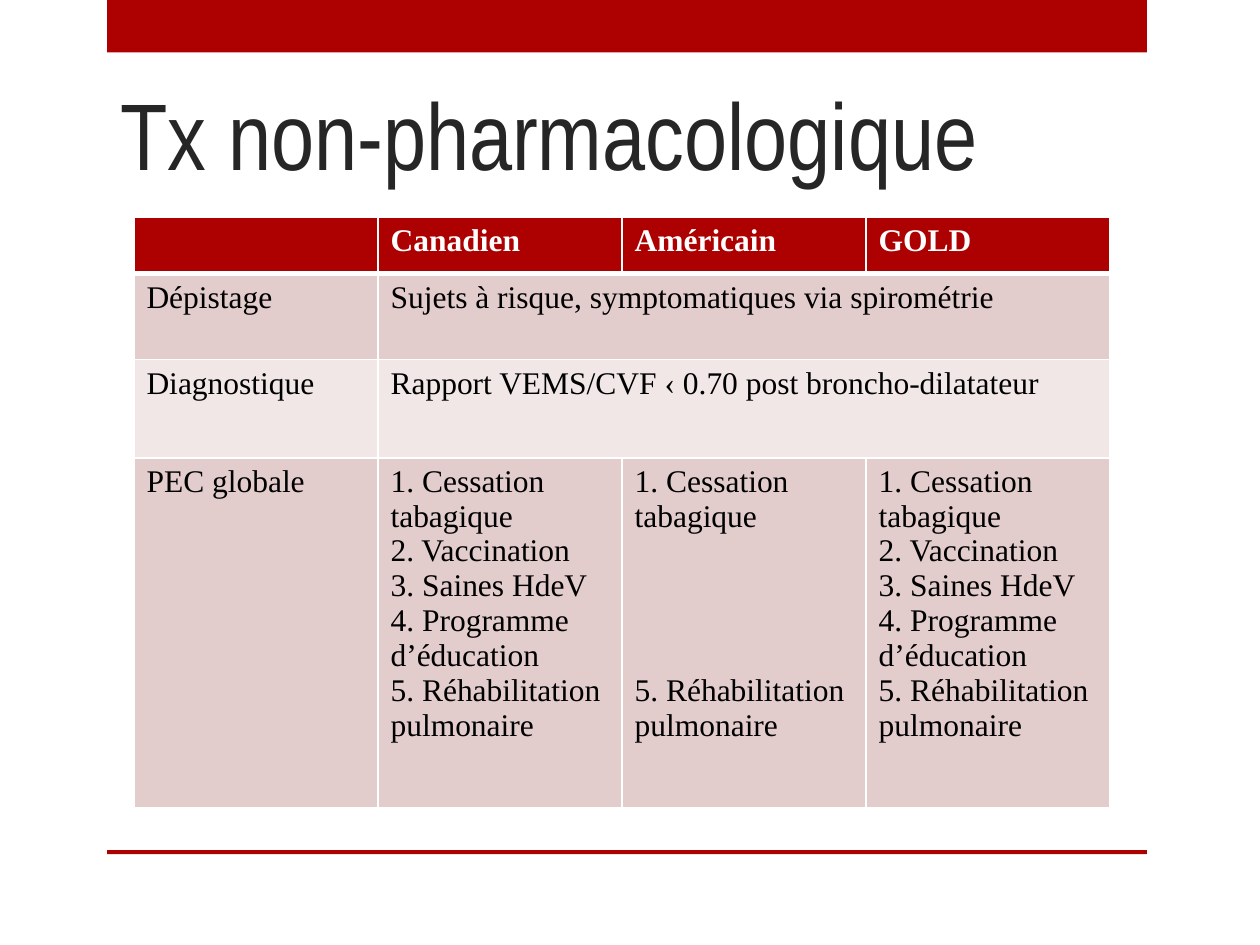
from lxml.etree import SubElement
from pptx import Presentation
from pptx.dml.color import RGBColor
from pptx.enum.shapes import MSO_SHAPE
from pptx.enum.text import MSO_ANCHOR
from pptx.oxml import parse_xml
from pptx.oxml.ns import nsdecls, qn
from pptx.util import Cm, Pt

COLORS = {
    "red": "AD0101",
    "title": "262626",
    "white": "FFFFFF",
    "black": "000000",
    "dark band": "E3CCCC",
    "light band": "F1E7E7",
}
TITLE_FORMAT = {"name": "Arial Narrow", "size": Pt(54), "bold": False}
HEADER_FORMAT = {"name": "Times New Roman", "size": Pt(18), "bold": True}
BODY_FORMAT = {**HEADER_FORMAT, "bold": False}

FIRST_STEP = "1. Cessation tabagique"
LAST_STEP = "5. Réhabilitation pulmonaire"
ALL_STEPS = [
    FIRST_STEP,
    "2. Vaccination",
    "3. Saines HdeV",
    "4. Programme d’éducation",
    LAST_STEP,
]
ROWS = [
    ["", "Canadien", "Américain", "GOLD"],
    ["Dépistage", "Sujets à risque, symptomatiques via spirométrie"],
    ["Diagnostique", "Rapport VEMS/CVF ‹ 0.70 post broncho-dilatateur"],
    ["PEC globale", ALL_STEPS, [FIRST_STEP, LAST_STEP], ALL_STEPS],
]
ROW_HEIGHTS = [1.14, 1.73, 1.98, 7.06]
ROW_FILLS = ["red", "dark band", "light band", "dark band"]
COLUMN_WIDTH = 4.92
SKIPPED_STEPS_GAP = Pt(80)


def rgb(color):
    return RGBColor.from_string(COLORS[color])


def add_bar(slide, top, height):
    bar = slide.shapes.add_shape(
        MSO_SHAPE.RECTANGLE, Cm(2.16), Cm(top), Cm(20.96), Cm(height)
    )
    bar.shadow.inherit = False
    bar.fill.solid()
    bar.fill.fore_color.rgb = rgb("red")
    bar.line.fill.background()


def write_span(para, text, formats, color):
    span = para.add_run()
    span.text = text
    for name, value in formats.items():
        setattr(span.font, name, value)
    span.font.color.rgb = rgb(color)


def add_title(slide, text):
    box = slide.shapes.add_textbox(Cm(2.18), Cm(1.12), Cm(20.93), Cm(2.82))
    frame = box.text_frame
    frame.word_wrap = True
    frame.vertical_anchor = MSO_ANCHOR.BOTTOM
    write_span(frame.paragraphs[0], text, TITLE_FORMAT, "title")


def set_borders(cell, widths):
    """Draw white borders; widths maps a side letter (L, R, T, B) to points."""
    properties = cell._tc.get_or_add_tcPr()
    for index, (side, width) in enumerate(widths.items()):
        line = parse_xml(f'<a:ln{side} {nsdecls("a")} w="{Pt(width)}"/>')
        fill = SubElement(line, qn("a:solidFill"))
        SubElement(fill, qn("a:srgbClr"), val=COLORS["white"])
        properties.insert(index, line)


def fill_cell(cell, content, formats, color):
    lines = content if isinstance(content, list) else [content]
    frame = cell.text_frame
    for index, text in enumerate(lines):
        para = frame.add_paragraph() if index else frame.paragraphs[0]
        if text:
            write_span(para, text, formats, color)
    if lines == [FIRST_STEP, LAST_STEP]:
        frame.paragraphs[1].space_before = SKIPPED_STEPS_GAP


def add_guideline_table(slide):
    columns = len(ROWS[0])
    table = slide.shapes.add_table(
        len(ROWS), columns, Cm(2.7), Cm(4.38),
        Cm(COLUMN_WIDTH * columns), Cm(sum(ROW_HEIGHTS)),
    ).table
    table.first_row = table.horz_banding = False
    for column in table.columns:
        column.width = Cm(COLUMN_WIDTH)

    for index, contents in enumerate(ROWS):
        row = table.rows[index]
        row.height = Cm(ROW_HEIGHTS[index])
        borders = {
            "L": 1,
            "R": 1,
            "T": 3 if index == 1 else 1,
            "B": 3 if index == 0 else 1,
        }
        for cell in row.cells:
            cell.fill.solid()
            cell.fill.fore_color.rgb = rgb(ROW_FILLS[index])
            set_borders(cell, borders)
        if len(contents) < columns:
            table.cell(index, 1).merge(table.cell(index, columns - 1))
        style = (HEADER_FORMAT, "white") if index == 0 else (BODY_FORMAT, "black")
        for cell, content in zip(row.cells, contents):
            fill_cell(cell, content, *style)


def main():
    deck = Presentation()
    deck.slide_width, deck.slide_height = Cm(25.4), Cm(19.05)
    slide = deck.slides.add_slide(deck.slide_layouts[6])
    add_bar(slide, 0, 1.06)
    add_bar(slide, 17.14, 0.08)
    add_title(slide, "Tx non-pharmacologique")
    add_guideline_table(slide)
    deck.save("out.pptx")


if __name__ == "__main__":
    main()
